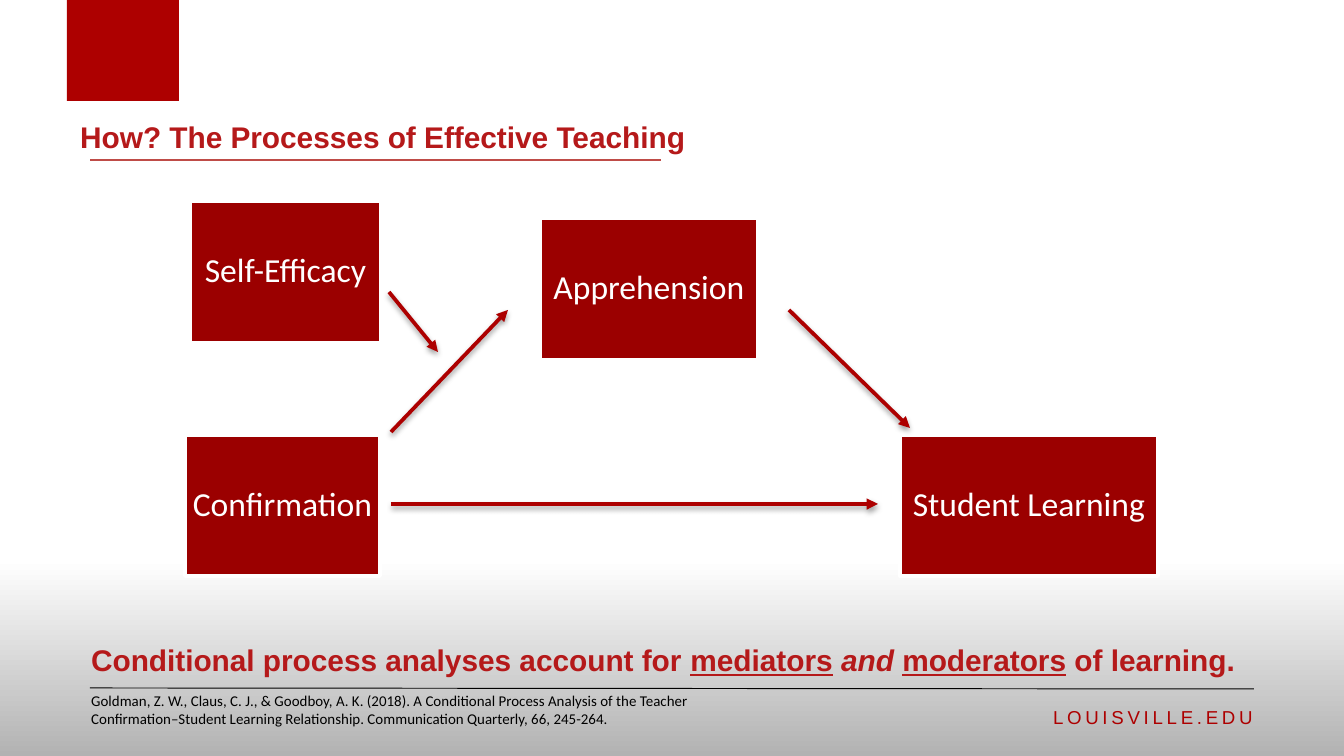
from lxml import etree
from pptx import Presentation
from pptx.dml.color import RGBColor
from pptx.enum.shapes import MSO_CONNECTOR, MSO_SHAPE
from pptx.enum.text import MSO_ANCHOR, PP_ALIGN
from pptx.oxml import parse_xml
from pptx.oxml.ns import nsdecls, qn
from pptx.util import Pt

RECTANGLE = MSO_SHAPE.RECTANGLE
STRAIGHT = MSO_CONNECTOR.STRAIGHT
TOP, MIDDLE, BOTTOM = MSO_ANCHOR.TOP, MSO_ANCHOR.MIDDLE, MSO_ANCHOR.BOTTOM
LEFT, CENTER, RIGHT = PP_ALIGN.LEFT, PP_ALIGN.CENTER, PP_ALIGN.RIGHT

WHITE = RGBColor(0xFF, 0xFF, 0xFF)
GRAY = RGBColor(0xB2, 0xB2, 0xB2)
BLACK = RGBColor(0, 0, 0)
CARDINAL = RGBColor(0xAD, 0, 0)
DARK_RED = RGBColor(0x9B, 0, 0)
TITLE_RED = RGBColor(0xB5, 0x19, 0x1A)
RULE_RED = RGBColor(0xBF, 0x4C, 0x48)

WIDTH, HEIGHT = 1344, 756
SCALE = 9144000 / WIDTH

HEADING = {"name": "Arial", "size": Pt(16), "bold": True}
LABEL = {"name": "Calibri", "size": Pt(18)}
CITATION = {"name": "Calibri", "size": Pt(8)}
ADDRESS = {"name": "Arial", "size": Pt(10)}

SHADOW = (
    f'<a:effectLst {nsdecls("a")}><a:outerShdw blurRad="{Pt(3.1)}" dist="{Pt(1.6)}" '
    'dir="5400000" rotWithShape="0"><a:srgbClr val="000000"><a:alpha val="38000"/>'
    "</a:srgbClr></a:outerShdw></a:effectLst>"
)


def px(*lengths):
    return [round(length * SCALE) for length in lengths]


class SlideBuilder:
    def __init__(self, deck):
        self.page = deck.slides.add_slide(deck.slide_layouts[6])

    def background(self, stops, angle):
        fill = self.page.background.fill
        fill.gradient()
        fill.gradient_angle = angle
        for stop, (position, color) in zip(fill.gradient_stops, stops):
            stop.position = position
            stop.color.rgb = color

    def fill_text(self, box, spans, style, color, align=LEFT, anchor=TOP, spacing=None):
        frame = box.text_frame
        frame.word_wrap = True
        frame.vertical_anchor = anchor
        para = frame.paragraphs[0]
        para.alignment = align
        if spacing:
            para.line_spacing = spacing
        for text, extra in spans:
            span = para.add_run()
            span.text = text
            for key, value in {**style, **extra}.items():
                setattr(span.font, key, value)
            span.font.color.rgb = color
        return para

    def text(self, place, spans, style, color, **layout):
        box = self.page.shapes.add_textbox(*px(*place))
        return self.fill_text(box, spans, style, color, **layout)

    def rectangle(self, place, color, border=None):
        box = self.page.shapes.add_shape(RECTANGLE, *px(*place))
        box.shadow.inherit = False
        box.fill.solid()
        box.fill.fore_color.rgb = color
        if border:
            box.line.color.rgb = border
            box.line.width = Pt(2)
        else:
            box.line.fill.background()
        return box

    def concept(self, place, label, inset):
        box = self.rectangle(place, DARK_RED, WHITE)
        for side in ("left", "top", "right", "bottom"):
            setattr(box.text_frame, f"margin_{side}", px(inset)[0])
        self.fill_text(box, [(label, {})], LABEL, WHITE, CENTER, MIDDLE, 0.9)

    def rule(self, ends, color, width):
        rule = self.page.shapes.add_connector(STRAIGHT, *px(*ends))
        rule.line.color.rgb = color
        rule.line.width = Pt(width)
        etree.SubElement(rule._element.spPr, qn("a:effectLst"))
        return rule

    def arrow(self, ends):
        arrow = self.rule(ends, CARDINAL, 2)
        properties = arrow._element.spPr
        etree.SubElement(properties.find(qn("a:ln")), qn("a:tailEnd"), type="triangle")
        properties.replace(properties.find(qn("a:effectLst")), parse_xml(SHADOW))


def main():
    deck = Presentation()
    deck.slide_width, deck.slide_height = px(WIDTH, HEIGHT)
    slide = SlideBuilder(deck)
    slide.background([(0.74, WHITE), (1.0, GRAY)], 270)

    slide.rule((1254, 689, 90, 688), BLACK, 0.5)
    address = slide.text((974, 699, 292, 40), [("LOUISVILLE.EDU", {})], ADDRESS,
                         CARDINAL, align=RIGHT)
    address.runs[0].font._element.set("spc", "200")
    slide.rectangle((67, 0, 112, 101), CARDINAL)
    slide.rule((661, 160, 90, 160), RULE_RED, 0.75)

    conclusion = [
        ("Conditional process analyses account for ", {}),
        ("mediators", {"underline": True}),
        (" ", {}),
        ("and ", {"italic": True}),
        ("moderators", {"underline": True}),
        (" of learning.", {}),
    ]
    slide.text((78, 633, 1266, 51), conclusion, HEADING, TITLE_RED, anchor=BOTTOM)
    slide.text((67, 110, 638, 51), [("How? The Processes of Effective Teaching", {})],
               HEADING, TITLE_RED, anchor=BOTTOM)

    for place, label, inset in (
        ((185, 435, 195, 141), "Confirmation", 6),
        ((900, 435, 258, 141), "Student Learning", 12),
        ((540, 218, 218, 142), "Apprehension", 12),
        ((190, 201, 191, 142), "Self-Efficacy", 12),
    ):
        slide.concept(place, label, inset)

    for ends in (
        (391, 504, 878, 504),
        (391, 432, 508, 310),
        (789, 310, 910, 428),
        (389, 292, 438, 352),
    ):
        slide.arrow(ends)

    citation = (
        "Goldman, Z. W., Claus, C. J., & Goodboy, A. K. (2018). A Conditional Process "
        "Analysis of the Teacher Confirmation–Student Learning Relationship. "
        "Communication Quarterly, 66, 245-264."
    )
    slide.text((78, 685, 676, 50), [(citation, {})], CITATION, BLACK)
    deck.save("out.pptx")


if __name__ == "__main__":
    main()
